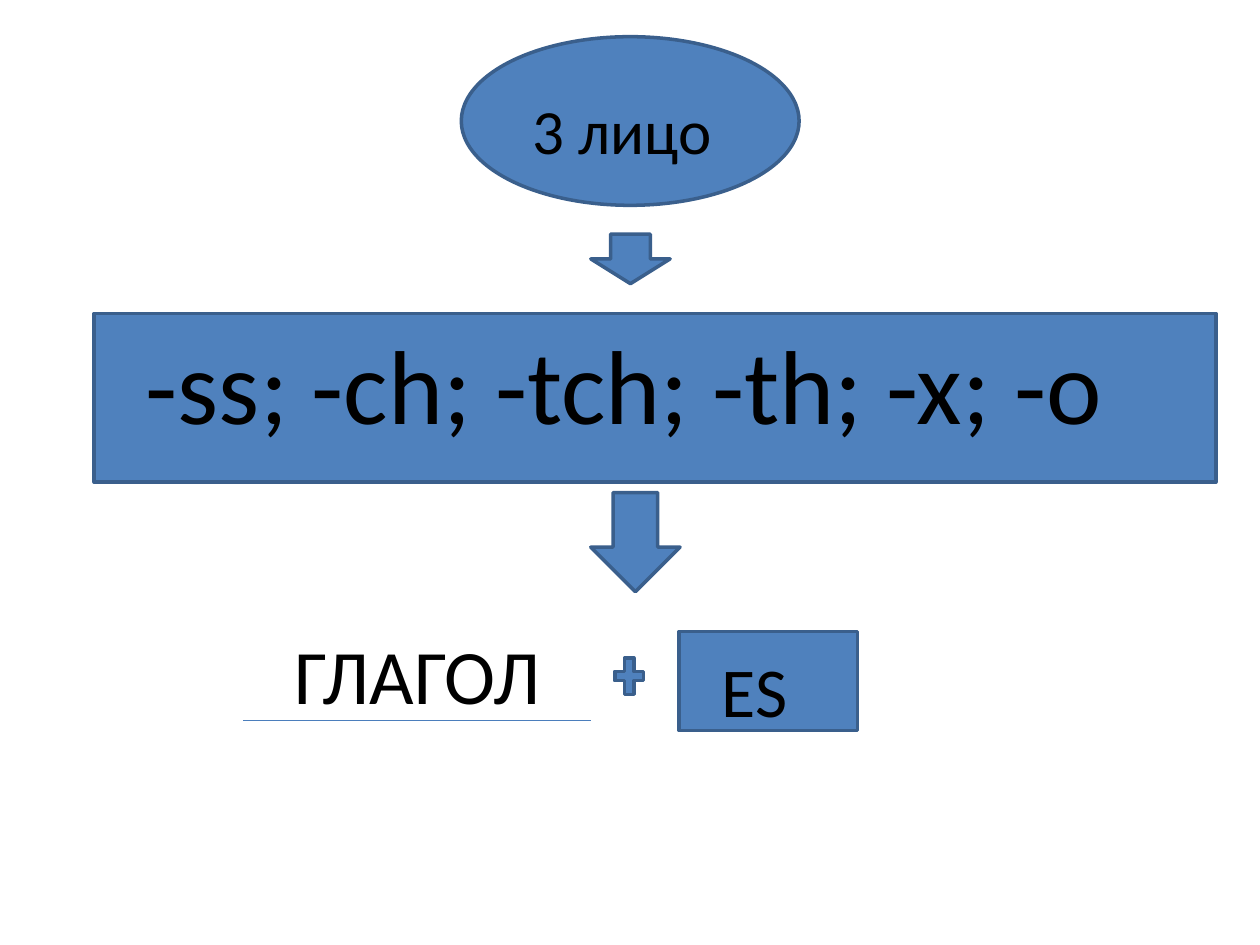
from dataclasses import dataclass

from lxml.etree import SubElement
from pptx import Presentation
from pptx.dml.color import RGBColor
from pptx.enum.shapes import MSO_CONNECTOR, MSO_SHAPE as Preset
from pptx.enum.text import MSO_AUTO_SIZE
from pptx.oxml.ns import qn
from pptx.util import Cm, Pt


@dataclass(frozen=True)
class Theme:
    font: str = "Calibri"
    fill: RGBColor = RGBColor(0x4F, 0x81, 0xBD)
    outline: RGBColor = RGBColor(0x3A, 0x5F, 0x8C)
    rule: RGBColor = RGBColor(0x4B, 0x7E, 0xBC)
    text: RGBColor = RGBColor(0, 0, 0)
    outline_width: float = 2
    rule_width: float = 0.75
    person_size: int = 36
    ending_size: int = 40
    verb_size: int = 44
    suffix_size: int = 60


THEME = Theme()

# Shapes: preset, (left, top, width, height) in cm
SHAPES = [
    (Preset.FLOWCHART_PROCESS, (1.9, 6.32, 22.61, 3.4)),
    (Preset.FLOWCHART_CONNECTOR, (9.3, 0.74, 6.81, 3.4)),
    (Preset.DOWN_ARROW, (11.91, 4.72, 1.6, 1)),
    (Preset.DOWN_ARROW, (11.91, 9.93, 1.8, 2)),
    (Preset.RECTANGLE, (13.69, 12.73, 3.6, 2)),
    (Preset.MATH_PLUS, (12.29, 13.13, 0.79, 1)),
]

# Labels: wording, type size, (left, top, width, height) in cm
LABELS = [
    ("-ss; -ch; -tch; -th; -x; -o", THEME.suffix_size, (2.69, 6.32, 20.19, 2.82)),
    ("3 лицо", THEME.person_size, (10.49, 1.73, 4.19, 1.8)),
    ("ГЛАГОЛ", THEME.verb_size, (5.69, 12.52, 7.59, 2.13)),
    ("ES", THEME.ending_size, (14.3, 12.93, 3.6, 1.96)),
]

# Line under the verb: start and end in cm
VERB_RULE = (4.9, 14.53, 11.91, 14.53)


def add_block(page, preset, place):
    block = page.shapes.add_shape(preset, *map(Cm, place))
    block.shadow.inherit = False
    block.fill.solid()
    block.fill.fore_color.rgb = THEME.fill
    block.line.color.rgb = THEME.outline
    block.line.width = Pt(THEME.outline_width)


def add_label(page, wording, size, place):
    box = page.shapes.add_textbox(*map(Cm, place))
    frame = box.text_frame
    frame.word_wrap = True
    frame.auto_size = MSO_AUTO_SIZE.SHAPE_TO_FIT_TEXT
    para = frame.paragraphs[0]
    para.text = wording
    para.font.name = THEME.font
    para.font.size = Pt(size)
    para.font.color.rgb = THEME.text


def add_rule(page, ends):
    rule = page.shapes.add_connector(MSO_CONNECTOR.STRAIGHT, *map(Cm, ends))
    rule.line.color.rgb = THEME.rule
    rule.line.width = Pt(THEME.rule_width)
    SubElement(rule._element.spPr, qn("a:effectLst"))


def main():
    deck = Presentation()
    deck.slide_width, deck.slide_height = Cm(25.4), Cm(19.05)
    page = deck.slides.add_slide(deck.slide_layouts[6])

    # Scheme first, then the wording on top
    for preset, place in SHAPES:
        add_block(page, preset, place)
    add_rule(page, VERB_RULE)
    for wording, size, place in LABELS:
        add_label(page, wording, size, place)

    deck.save("out.pptx")


if __name__ == "__main__":
    main()
